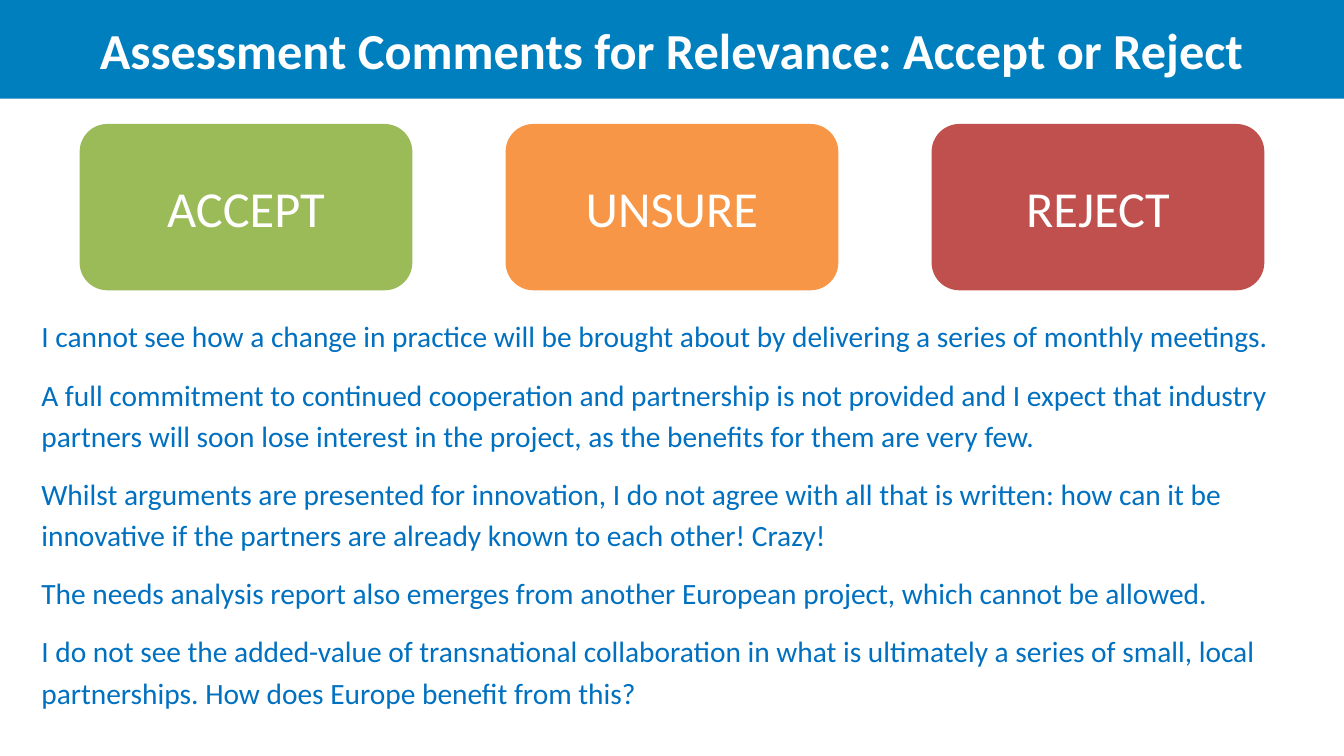
from pptx import Presentation
from pptx.dml.color import RGBColor
from pptx.enum import shapes, text
from pptx.util import Inches, Pt

WHITE = RGBColor(0xFF, 0xFF, 0xFF)
HEADER_BLUE = RGBColor(0x00, 0x7F, 0xBE)
TEXT_BLUE = RGBColor(0x00, 0x70, 0xC0)
GREEN = RGBColor(0x9B, 0xBB, 0x59)
ORANGE = RGBColor(0xF7, 0x96, 0x46)
RED = RGBColor(0xC0, 0x50, 0x4D)

VERDICTS = [("ACCEPT", GREEN), ("UNSURE", ORANGE), ("REJECT", RED)]
COMMENTS = [
    "I cannot see how a change in practice will be brought about by delivering "
    "a series of monthly meetings.",
    "A full commitment to continued cooperation and partnership is not provided "
    "and I expect that industry partners will soon lose interest in the project, "
    "as the benefits for them are very few.",
    "Whilst arguments are presented for innovation, I do not agree with all that "
    "is written: how can it be innovative if the partners are already known to "
    "each other! Crazy!",
    "The needs analysis report also emerges from another European project, "
    "which cannot be allowed.",
    "I do not see the added-value of transnational collaboration in what is "
    "ultimately a series of small, local partnerships. How does Europe benefit "
    "from this?",
]


def add_run(p, words, size, color, bold=False):
    """Add one formatted run to a paragraph."""
    r = p.add_run()
    r.text = words
    r.font.name = "Calibri"
    r.font.size = Pt(size)
    r.font.bold = bold
    r.font.color.rgb = color


def add_centred(sp, words, bold=False):
    """Write one large white line in the middle of a shape."""
    tf = sp.text_frame
    tf.word_wrap = True
    tf.auto_size = text.MSO_AUTO_SIZE.NONE
    tf.vertical_anchor = text.MSO_ANCHOR.MIDDLE
    p = tf.paragraphs[0]
    p.alignment = text.PP_ALIGN.CENTER
    add_run(p, words, 36, WHITE, bold)


def add_header(s, left, top, width, height):
    """Turn the title placeholder into the header band."""
    sp = s.shapes.title
    sp.left, sp.top = Inches(left), Inches(top)
    sp.width, sp.height = Inches(width), Inches(height)
    sp.fill.solid()
    sp.fill.fore_color.rgb = HEADER_BLUE
    add_centred(sp, "Assessment Comments for Relevance: Accept or Reject", True)


def add_verdicts(s, left, top, width, height, card_width):
    """Spread the verdict cards evenly across the box."""
    step = (width - card_width) / (len(VERDICTS) - 1)
    for i, (label, color) in enumerate(VERDICTS):
        sp = s.shapes.add_shape(
            shapes.MSO_SHAPE.ROUNDED_RECTANGLE,
            Inches(left + i * step), Inches(top), Inches(card_width), Inches(height))
        sp.shadow.inherit = False
        sp.fill.solid()
        sp.fill.fore_color.rgb = color
        sp.line.fill.background()
        add_centred(sp, label)


def add_comments(s, left, top, width, height):
    """Place the assessor comments in a one-cell table."""
    table = s.shapes.add_table(
        1, 1, Inches(left), Inches(top), Inches(width), Inches(height)).table
    table.first_row = table.horz_banding = False
    cell = table.cell(0, 0)
    cell.fill.background()
    cell.margin_left = cell.margin_right = Inches(0.12)
    cell.margin_top = cell.margin_bottom = 0
    tf = cell.text_frame
    for i, comment in enumerate(COMMENTS):
        p = tf.add_paragraph() if i else tf.paragraphs[0]
        p.line_spacing = 1.15
        p.space_after = Pt(12)
        add_run(p, comment, 21, TEXT_BLUE)


def main():
    """Build and save the slide."""
    prs = Presentation()
    prs.slide_width, prs.slide_height = Inches(13.33), Inches(7.5)
    s = prs.slides.add_slide(prs.slide_layouts[5])
    add_header(s, 0, 0, 13.33, 0.98)
    add_comments(s, 0.29, 3.12, 12.84, 3.89)
    add_verdicts(s, 0.79, 1.23, 11.75, 1.65, 3.3)
    prs.save("out.pptx")


if __name__ == "__main__":
    main()
